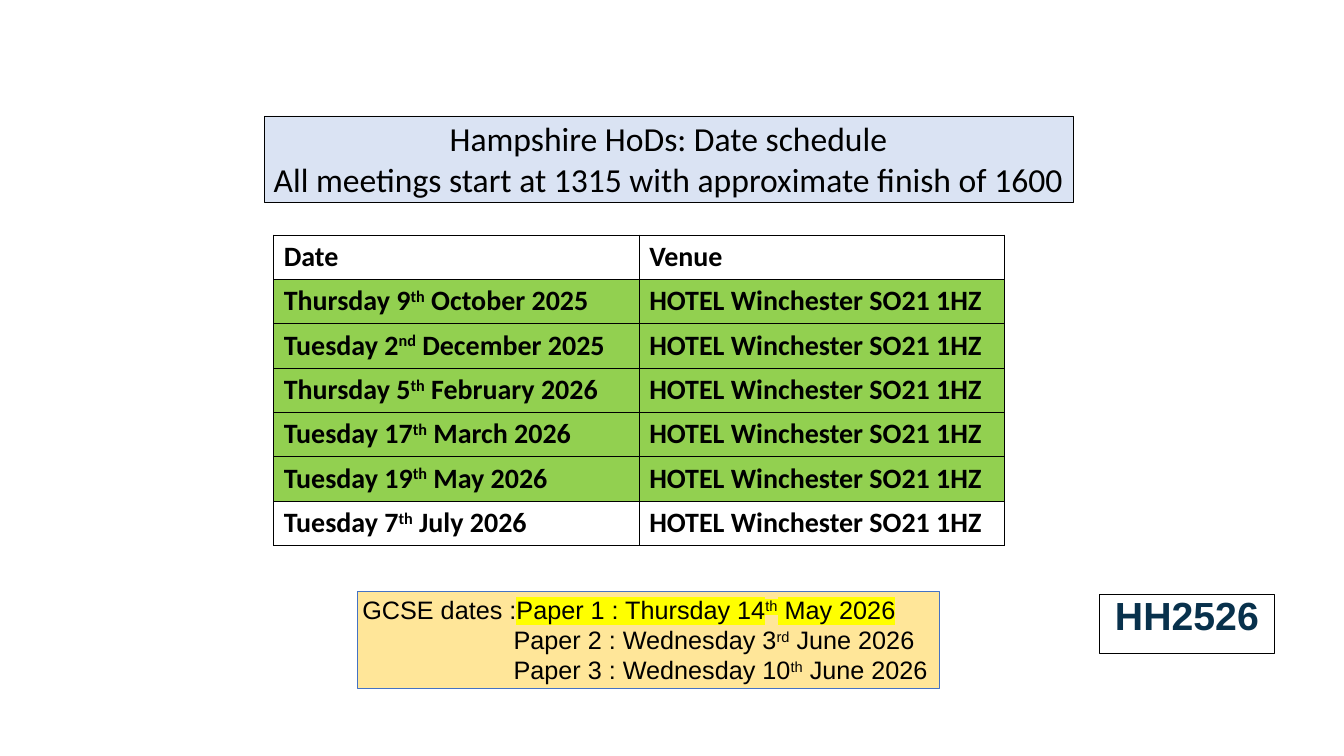
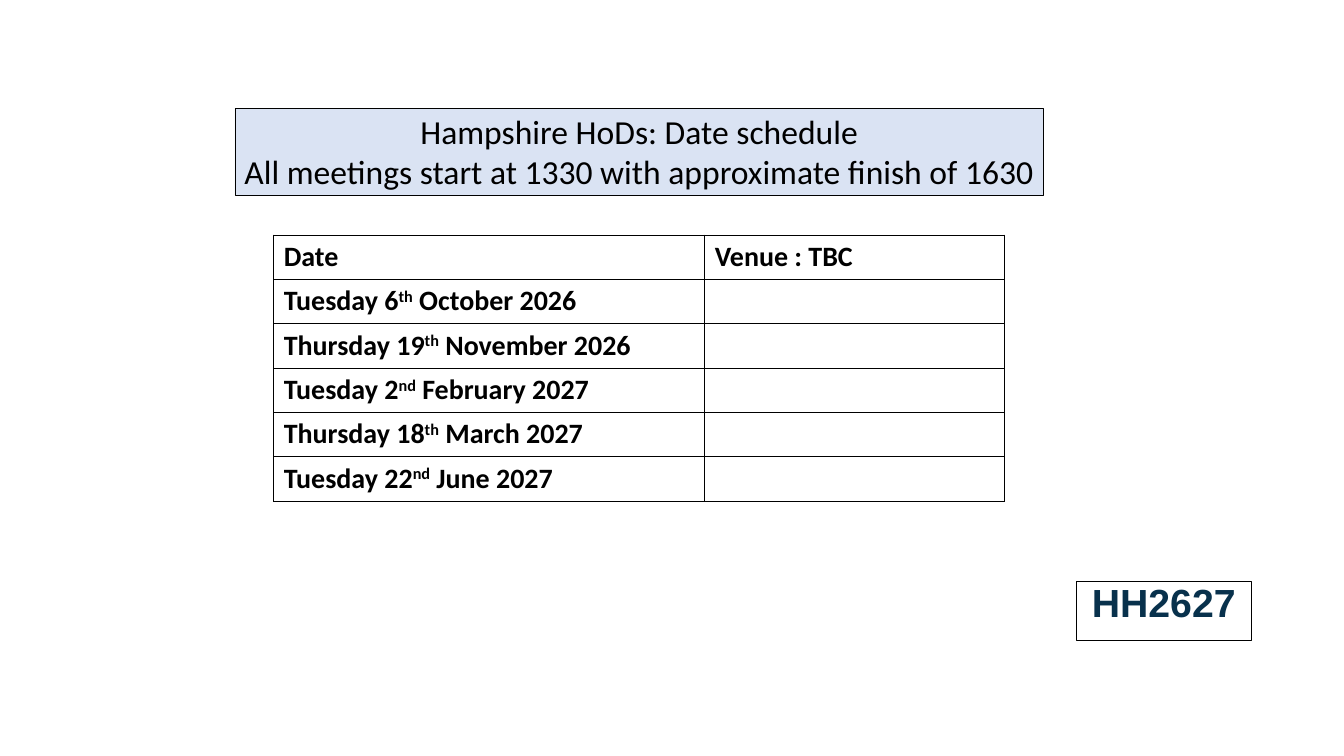
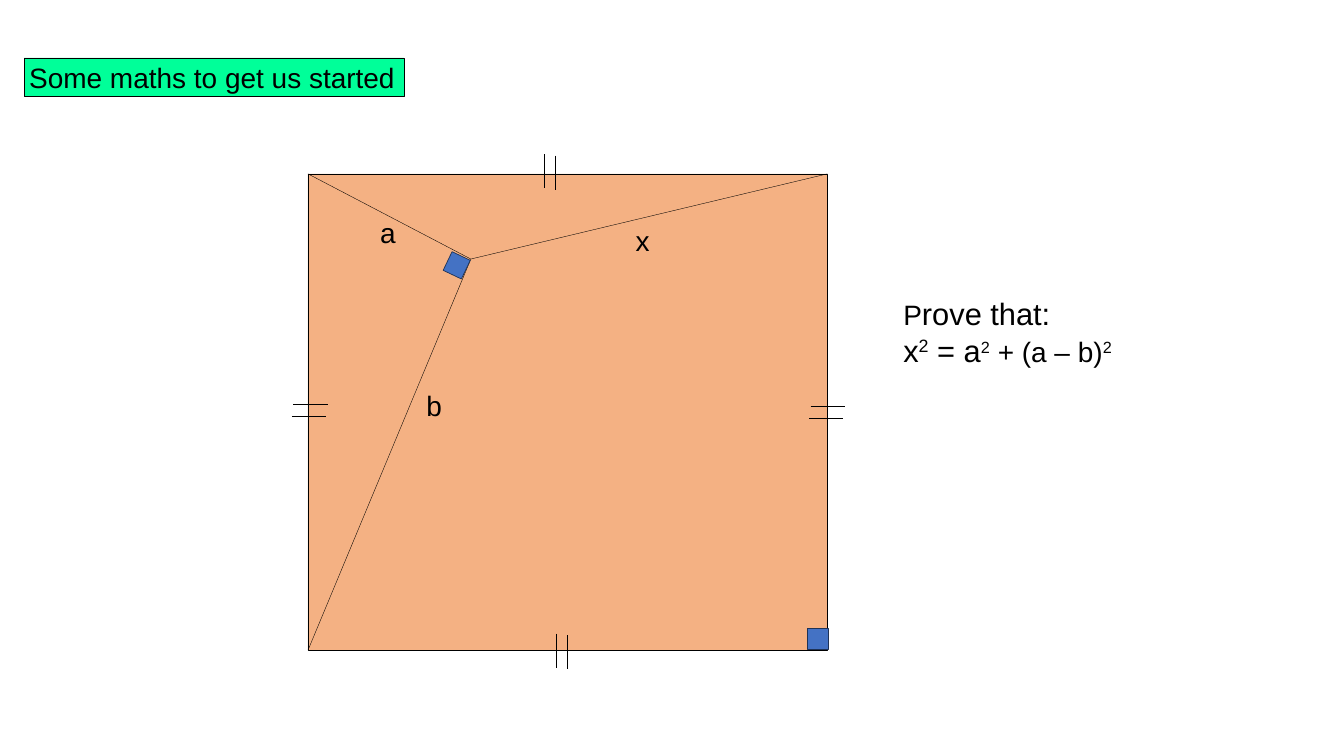
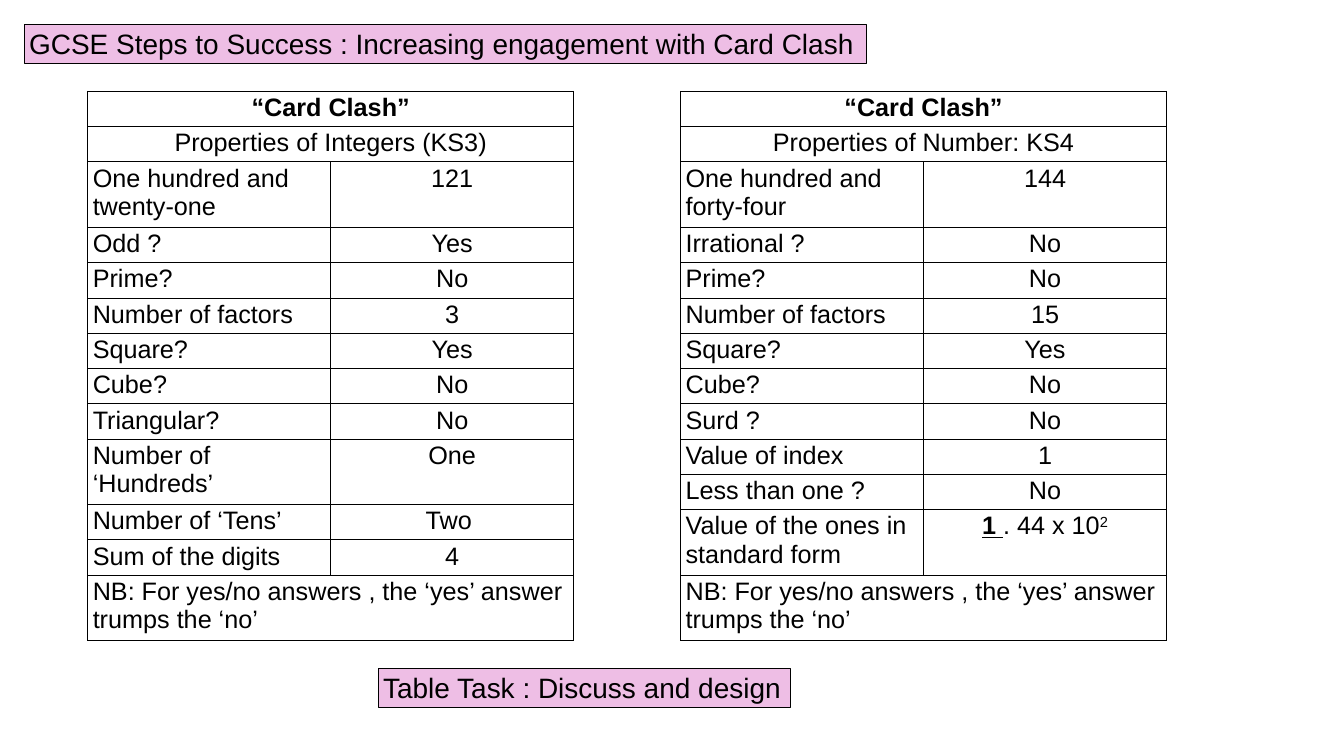
"""Build four slides for a heads of department meeting: dates, a proof and a card game."""
from dataclasses import dataclass
from typing import Optional

from lxml import etree
from pptx import Presentation
from pptx.dml.color import RGBColor
from pptx.enum.shapes import MSO_CONNECTOR, MSO_SHAPE
from pptx.enum.text import MSO_ANCHOR, PP_ALIGN
from pptx.oxml.ns import qn
from pptx.util import Inches, Pt

RECTANGLE = MSO_SHAPE.RECTANGLE
STRAIGHT = MSO_CONNECTOR.STRAIGHT
TOP = MSO_ANCHOR.TOP
LEFT, CENTER = PP_ALIGN.LEFT, PP_ALIGN.CENTER

BLACK = RGBColor(0x00, 0x00, 0x00)
NAVY = RGBColor(0x08, 0x31, 0x4C)
BLUE = RGBColor(0x44, 0x72, 0xC4)
DARK_BLUE = RGBColor(0x1E, 0x32, 0x56)
PALE_BLUE = RGBColor(0xDA, 0xE3, 0xF3)
GREEN = RGBColor(0x92, 0xD0, 0x50)
MINT = RGBColor(0x00, 0xFF, 0x99)
CREAM = RGBColor(0xFF, 0xE6, 0x99)
YELLOW = RGBColor(0xFF, 0xFF, 0x00)
ORANGE = RGBColor(0xF4, 0xB1, 0x83)
PINK = RGBColor(0xEE, 0xBE, 0xE5)

HEADING_SIZE = 40
CARD_NAME = "“Card Clash”"
CARD_NOTE = "NB: For yes/no answers , the ‘yes’ answer trumps the ‘no’"
VENUE = "HOTEL Winchester SO21 1HZ"


@dataclass(frozen=True)
class Style:
    """Look of a piece of text."""
    size: float
    font: str = "Arial"
    color: RGBColor = BLACK
    bold: bool = False
    underline: bool = False
    highlight: Optional[RGBColor] = None


@dataclass(frozen=True)
class Para:
    """One paragraph of styled pieces; text between carets is raised."""
    pieces: tuple[tuple[str, Style], ...]
    align: PP_ALIGN = LEFT
    indent: float = 0
    spacing: Optional[float] = None


@dataclass(frozen=True)
class Frame:
    """Position and size in inches."""
    left: float
    top: float
    width: float
    height: float

    def lengths(self) -> tuple:
        """Return the four measures as lengths."""
        return tuple(map(Inches, (self.left, self.top, self.width, self.height)))


@dataclass(frozen=True)
class Card:
    """A game card: its place, topic and properties."""
    left: float
    topic: str
    properties: tuple[tuple[str, Para], ...]
    tall_rows: tuple[int, ...]


HEADING = Style(HEADING_SIZE)
SCHEDULE_TITLE = Style(48, "Calibri")
SCHEDULE_CELL = Style(40, "Calibri", bold=True)
CODE = Style(56, color=NAVY, bold=True)
EXAM = Style(36)
EXAM_MARKED = Style(36, highlight=YELLOW)
CARD_TEXT = Style(36)
CARD_TITLE = Style(36, bold=True)
CARD_DIGIT = Style(36, bold=True, underline=True)
PROOF = Style(44)


def para(text: str, style: Style, align: PP_ALIGN = LEFT, indent: float = 0,
         spacing: Optional[float] = None) -> Para:
    """Make a paragraph in a single style."""
    return Para(((text, style),), align, indent, spacing)


def format_run(r, style: Style, raised: bool) -> None:
    """Apply a style to a run."""
    r.font.size = Pt(style.size)
    r.font.name = style.font
    r.font.bold = style.bold
    r.font.underline = style.underline
    r.font.color.rgb = style.color
    rPr = r.font._element
    if raised:
        rPr.set("baseline", "30000")
    if style.highlight is not None:
        mark = etree.Element(qn("a:highlight"))
        etree.SubElement(mark, qn("a:srgbClr"), val=str(style.highlight))
        rPr.find(qn("a:solidFill")).addnext(mark)


def write(tf, paras: list[Para]) -> None:
    """Fill a text frame with paragraphs."""
    tf.word_wrap = True
    for i, item in enumerate(paras):
        p = tf.add_paragraph() if i else tf.paragraphs[0]
        p.alignment = item.align
        if item.spacing:
            p.line_spacing = item.spacing
        if item.indent:
            pPr = p._p.get_or_add_pPr()
            pPr.set("marL", str(Inches(item.indent)))
            pPr.set("indent", "0")
        for text, style in item.pieces:
            for j, part in enumerate(text.split("^")):
                if part:
                    r = p.add_run()
                    r.text = part
                    format_run(r, style, j % 2 == 1)


def add_box(slide, frame: Frame, fill: Optional[RGBColor], paras: list[Para],
            line: RGBColor = BLACK, width: float = 0.75, rotation: float = 0) -> None:
    """Add an outlined rectangle with optional fill and text."""
    sp = slide.shapes.add_shape(RECTANGLE, *frame.lengths())
    sp.shadow.inherit = False
    sp.rotation = rotation
    if fill is None:
        sp.fill.background()
    else:
        sp.fill.solid()
        sp.fill.fore_color.rgb = fill
    sp.line.color.rgb = line
    sp.line.width = Pt(width)
    sp.text_frame.vertical_anchor = TOP
    write(sp.text_frame, paras)


def add_text(slide, frame: Frame, paras: list[Para]) -> None:
    """Add a plain text box."""
    write(slide.shapes.add_textbox(*frame.lengths()).text_frame, paras)


def add_line(slide, start: tuple[float, float], end: tuple[float, float]) -> None:
    """Add a thin black line between two points."""
    cxn = slide.shapes.add_connector(STRAIGHT, *map(Inches, (*start, *end)))
    cxn.line.color.rgb = BLACK
    cxn.line.width = Pt(0.5)
    etree.SubElement(cxn._element.spPr, qn("a:effectLst"))


def add_borders(cell) -> None:
    """Draw black borders around a table cell."""
    tcPr = cell._tc.get_or_add_tcPr()
    for side in ("lnL", "lnR", "lnT", "lnB"):
        ln = etree.SubElement(tcPr, qn(f"a:{side}"), w=str(Pt(1)))
        fill = etree.SubElement(ln, qn("a:solidFill"))
        etree.SubElement(fill, qn("a:srgbClr"), val=str(BLACK))


def add_grid(slide, left: float, top: float, widths: list[float], heights: list[float],
             rows: list[list[Optional[Para]]], margins: tuple[float, float] = (0.1, 0.05),
             filled: range = range(0)) -> None:
    """Add a bordered table; a row of one paragraph spans all columns."""
    frame = Frame(left, top, sum(widths), sum(heights))
    table = slide.shapes.add_table(len(rows), len(widths), *frame.lengths()).table
    table.first_row = table.horz_banding = False
    for column, width in zip(table.columns, widths):
        column.width = Inches(width)
    for i, (row, height) in enumerate(zip(rows, heights)):
        table.rows[i].height = Inches(height)
        for j in range(len(widths)):
            cell = table.cell(i, j)
            cell.margin_left = cell.margin_right = Inches(margins[0])
            cell.margin_top = cell.margin_bottom = Inches(margins[1])
            add_borders(cell)
            if i in filled:
                cell.fill.solid()
                cell.fill.fore_color.rgb = GREEN
            else:
                cell.fill.background()
        if len(row) == 1:
            table.cell(i, 0).merge(table.cell(i, len(widths) - 1))
        for j, item in enumerate(row):
            if item:
                write(table.cell(i, j).text_frame, [item])


def add_schedule(slide, title_at: tuple[float, float], hours: str, widths: list[float],
                 rows: list[tuple[str, str]], code: str, code_at: tuple[float, float],
                 filled: range = range(0)) -> None:
    """Add the title, date table and course code of one school year."""
    cells = [[para(text, SCHEDULE_CELL) if text else None for text in row] for row in rows]
    add_grid(slide, 5.43, 4.66, widths, [0.88] * len(rows), cells, (0.2, 0.1), filled)
    lines = ["Hampshire HoDs: Date schedule", f"All meetings start at {hours}"]
    add_box(slide, Frame(*title_at, 16.04, 1.72), PALE_BLUE,
            [para(text, SCHEDULE_TITLE, CENTER) for text in lines])
    add_box(slide, Frame(*code_at, 3.47, 1.17), None, [para(code, CODE, CENTER, spacing=0.9)])


def build_this_year(slide) -> None:
    """Build the 2025-26 schedule with exam dates."""
    dates = ["Thursday 9^th^ October 2025", "Tuesday 2^nd^ December 2025",
             "Thursday 5^th^ February 2026", "Tuesday 17^th^ March 2026",
             "Tuesday 19^th^ May 2026", "Tuesday 7^th^ July 2026"]
    rows = [("Date", "Venue")] + [(date, VENUE) for date in dates]
    add_schedule(slide, (5.24, 2.3), "1315 with approximate finish of 1600", [7.25, 7.25],
                 rows, "HH2526", (21.81, 11.79), range(1, 6))
    add_box(slide, Frame(7.09, 11.74, 11.55, 1.92), CREAM, [
        Para((("GCSE dates :", EXAM), ("Paper 1 : Thursday 14^th^ May 2026", EXAM_MARKED))),
        para("Paper 2 : Wednesday 3^rd^ June 2026", EXAM, indent=3),
        para("Paper 3 : Wednesday 10^th^ June 2026", EXAM, indent=3),
    ], BLUE)


def build_next_year(slide) -> None:
    """Build the 2026-27 schedule."""
    dates = ["Tuesday 6^th^ October 2026", "Thursday 19^th^ November 2026",
             "Tuesday 2^nd^ February 2027", "Thursday 18^th^ March 2027",
             "Tuesday 22^nd^ June 2027"]
    rows = [("Date", "Venue : TBC")] + [(date, "") for date in dates]
    add_schedule(slide, (4.66, 2.15), "1330 with approximate finish of 1630", [8.55, 5.95],
                 rows, "HH2627", (21.35, 11.53))


def add_equal_marks(slide, x: float, y: float, upright: bool) -> None:
    """Add a pair of short lines that mark an equal side."""
    length, gap, shift = 0.68, 0.23, 0.03
    if upright:
        starts, step = [(x, y), (x + gap, y + shift)], (0, length)
    else:
        starts, step = [(x + shift, y), (x, y + gap)], (length, 0)
    for left, top in starts:
        add_line(slide, (left, top), (left + step[0], top + step[1]))


def build_proof(slide) -> None:
    """Build the square and the statement to prove."""
    square = Frame(6.11, 3.45, 10.3, 9.45)
    right, bottom = square.left + square.width, square.top + square.height
    meeting_point = (9.34, 5.14)
    add_box(slide, Frame(0.48, 1.15, 7.53, 0.77), MINT,
            [para("Some maths to get us started", HEADING)])
    add_box(slide, square, ORANGE, [], width=1)
    for corner in ((square.left, square.top), (square.left, bottom), (right, square.top)):
        add_line(slide, corner, meeting_point)
    for left, top, rotation in ((8.86, 5.06, 25.5), (16.02, 12.47, 90)):
        add_box(slide, Frame(left, top, 0.4, 0.41), BLUE, [], DARK_BLUE, 1, rotation)
    for name, left, top in (("a", 7.44, 4.22), ("b", 8.36, 7.66), ("x", 12.51, 4.39)):
        add_text(slide, Frame(left, top, 0.57, 0.77), [para(name, HEADING)])
    add_text(slide, Frame(17.82, 5.79, 4.58, 2.26), [
        Para((("P", HEADING), ("rove that:", PROOF))),
        Para((("x^2^ = a", PROOF), ("^2^ + (a – b)^2^", HEADING))),
    ])
    for x, y, upright in ((11.03, 12.57, True), (16.05, 8.06, False),
                          (10.79, 3.06, True), (5.79, 8.02, False)):
        add_equal_marks(slide, x, y, upright)


def answers(*pairs: tuple[str, str]) -> tuple[tuple[str, Para], ...]:
    """Pair each property with its centred answer."""
    return tuple((name, para(value, CARD_TEXT, CENTER)) for name, value in pairs)


def add_card(slide, card: Card) -> None:
    """Add one game card as a table."""
    rows = [[para(CARD_NAME, CARD_TITLE, CENTER)], [para(card.topic, CARD_TEXT, CENTER)]]
    rows += [[para(name, CARD_TEXT), value] for name, value in card.properties]
    rows.append([para(CARD_NOTE, CARD_TEXT)])
    heights = [1.3 if i in card.tall_rows else 0.7 for i in range(len(rows))]
    add_grid(slide, card.left, 1.81, [4.82, 4.82], heights, rows)


def build_cards(slide) -> None:
    """Build the two game cards and the task."""
    standard_form = Para((("1 ", CARD_DIGIT), (". 44 x 10^2^", CARD_TEXT)), CENTER)
    cards = [
        Card(1.74, "Properties of Integers (KS3)", answers(
            ("One hundred and twenty-one", "121"), ("Odd ?", "Yes"), ("Prime?", "No"),
            ("Number of factors", "3"), ("Square?", "Yes"), ("Cube?", "No"),
            ("Triangular?", "No"), ("Number of ‘Hundreds’", "One"),
            ("Number of ‘Tens’", "Two "), ("Sum of the digits", "4")), (2, 9, 12)),
        Card(13.5, "Properties of Number: KS4", answers(
            ("One hundred and forty-four", "144"), ("Irrational ?", "No"), ("Prime?", "No"),
            ("Number of factors", "15"), ("Square?", "Yes"), ("Cube?", "No"),
            ("Surd ?", "No"), ("Value of index", "1"), ("Less than one ?", "No"),
        ) + (("Value of the ones in standard form", standard_form),), (2, 11, 12)),
    ]
    add_box(slide, Frame(0.48, 0.48, 16.7, 0.77), PINK, [
        para("GCSE Steps to Success : Increasing engagement with Card Clash", HEADING)])
    for card in cards:
        add_card(slide, card)
    add_box(slide, Frame(7.5, 13.26, 8.17, 0.77), PINK,
            [para("Table Task : Discuss and design", HEADING)])


def main() -> None:
    """Create and save the presentation."""
    prs = Presentation()
    prs.slide_width, prs.slide_height = Inches(26.66), Inches(15)
    for build in (build_this_year, build_next_year, build_proof, build_cards):
        build(prs.slides.add_slide(prs.slide_layouts[6]))
    prs.save("out.pptx")


if __name__ == "__main__":
    main()
